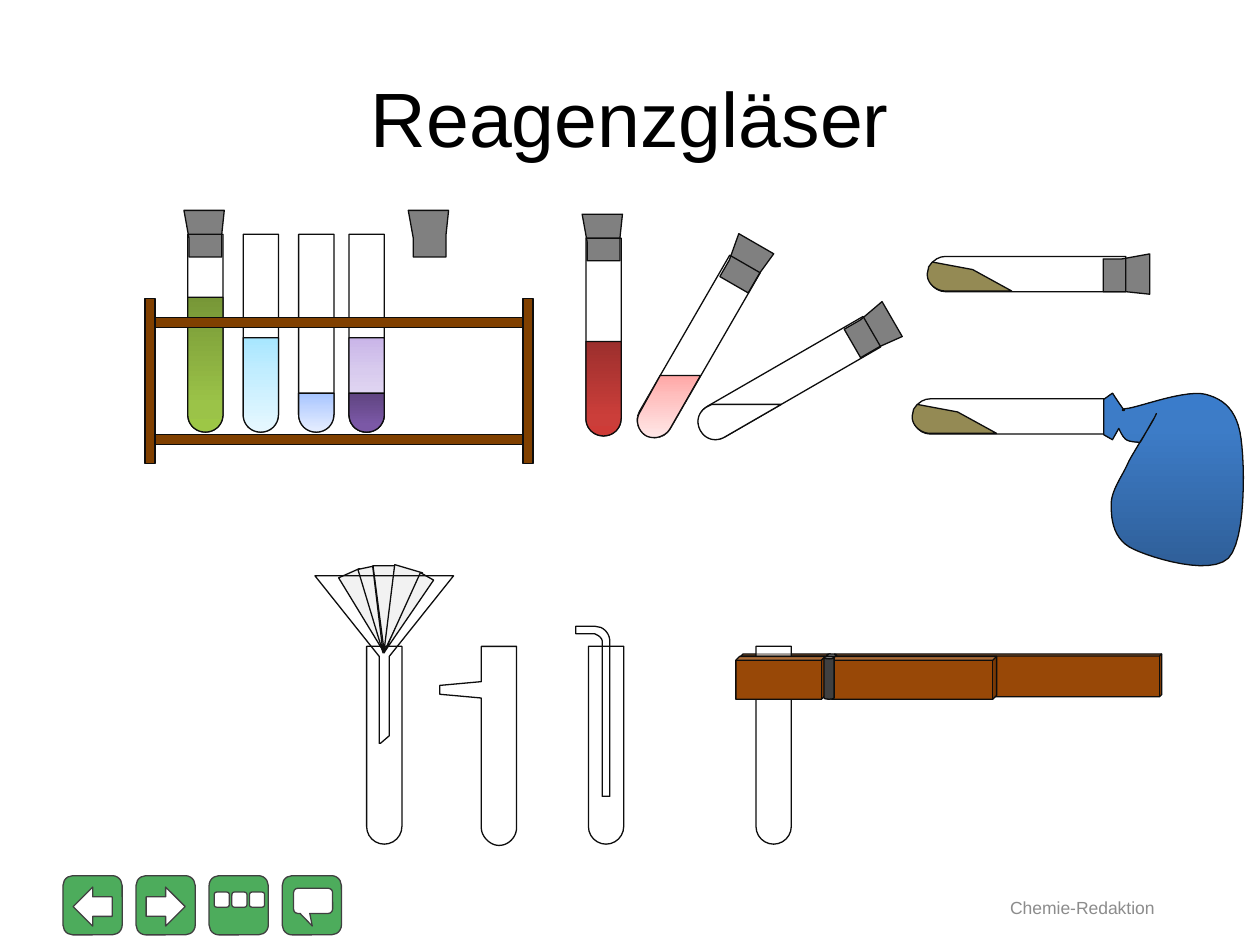
from copy import deepcopy

from pptx import Presentation
from pptx import util as u
from pptx.dml.color import RGBColor
from pptx.enum import shapes, text
from pptx.oxml.ns import qn
from lxml import etree

BLACK = RGBColor(0x00, 0x00, 0x00)
WHITE = RGBColor(0xFF, 0xFF, 0xFF)
INK = RGBColor(0x0D, 0x0D, 0x0D)
DARK = RGBColor(0x40, 0x40, 0x40)
FOOTER = RGBColor(0x8C, 0x8C, 0x8C)
BUTTON = RGBColor(0x4D, 0xAC, 0x5C)
RUBBER = RGBColor(0x80, 0x80, 0x80)
RACK = RGBColor(0x80, 0x40, 0x00)
WOOD = RGBColor(0x98, 0x48, 0x07)
PAPER = RGBColor(0xF2, 0xF2, 0xF2)
SAND = RGBColor(0x94, 0x8A, 0x54)


def gradient(middle, *colors):
    return list(zip((0, middle, 1), map(RGBColor.from_string, colors)))


GREEN = gradient(0.8, "779737", "9BC348", "9DC746")
CYAN = gradient(0.35, "A7E6FF", "C1EDFF", "E7F8FF")
BLUE = gradient(0.35, "A4C4FF", "BFD4FF", "E6EEFF")
LILAC = gradient(0.35, "C9B5E8", "D8CBEE", "F0EAF9")
PURPLE = gradient(0.8, "5F4480", "7B58A6", "7C57A8")
PINK = gradient(0.35, "FFA6A5", "FFC0BF", "FFE7E7")
RED = gradient(0.8, "9C2F2D", "CB3E3A", "CE3B37")
BALLOON = gradient(0.8, "2F5F99", "3D7CC7", "3A7CCB")

MSO = shapes.MSO_SHAPE
TUBE_W, TUBE_H = 0.28, 1.57


def write(tf, words, size=10, color=BLACK, font="Arial", align=text.PP_ALIGN.CENTER):
    tf.word_wrap = True
    tf.vertical_anchor = text.MSO_ANCHOR.MIDDLE
    p = tf.paragraphs[0]
    p.alignment = align
    r = p.add_run()
    r.text = words
    r.font.size = u.Pt(size)
    r.font.name = font
    r.font.color.rgb = color


def flatten(points, steps=12):
    flat = []
    for point in points:
        if len(point) == 2:
            flat.append(point)
            continue
        x0, y0 = flat[-1]
        x1, y1, x2, y2, x3, y3 = point
        for i in range(1, steps + 1):
            t = i / steps
            a, b, c, d = (1 - t) ** 3, 3 * t * (1 - t) ** 2, 3 * t * t * (1 - t), t ** 3
            flat.append((a * x0 + b * x1 + c * x2 + d * x3, a * y0 + b * y1 + c * y2 + d * y3))
    return flat


class Sheet:
    def __init__(self, s, line=INK, width=0.75):
        self.s, self.line, self.width = s, line, width

    def title(self, words, x, y, w, h):
        sp = self.s.shapes.title
        sp.left, sp.top, sp.width, sp.height = map(u.Inches, (x, y, w, h))
        write(sp.text_frame, words, size=44)

    def label(self, words, x, y, w, h, **fmt):
        sp = self.s.shapes.add_textbox(*map(u.Inches, (x, y, w, h)))
        write(sp.text_frame, words, **fmt)

    def style(self, sp, fill, line=None, angle=270):
        sp.shadow.inherit = False
        sp.line.color.rgb = line or self.line
        sp.line.width = u.Pt(self.width)
        if fill is None:
            sp.fill.background()
        elif isinstance(fill, list):
            sp.fill.gradient()
            sp.fill.gradient_angle = angle
            first = sp._element.spPr.find(".//" + qn("a:gs"))
            first.addnext(deepcopy(first))
            for stop, (position, color) in zip(sp.fill.gradient_stops, fill):
                stop.position = position
                stop.color.rgb = color
        else:
            sp.fill.solid()
            sp.fill.fore_color.rgb = fill
        return sp

    def shape(self, kind, x, y, w, h, fill=None, line=None, rot=0, adj=()):
        sp = self.s.shapes.add_shape(kind, *map(u.Inches, (x, y, w, h)))
        sp.rotation = rot
        for i, value in enumerate(adj):
            sp.adjustments[i] = value
        return self.style(sp, fill, line)

    def outline(self, points, fill=None, dx=0, dy=0, rot=0, angle=270):
        pts = [(u.Inches(x + dx), u.Inches(y + dy)) for x, y in flatten(points)]
        fb = self.s.shapes.build_freeform(*pts[0])
        fb.add_line_segments(pts[1:], close=True)
        sp = self.style(fb.convert_to_shape(), fill, angle=angle)
        sp.rotation = rot
        return sp

    def tube(self, x, y, rot=0, fill=None):
        return self.shape(MSO.ROUND_2_SAME_RECTANGLE, x, y, TUBE_W, TUBE_H, fill, rot=rot, adj=(0, 0.5))

    def liquid(self, x, y, level, fill):
        r, end = x + TUBE_W, y + TUBE_H
        mid, bend = x + TUBE_W / 2, end - 0.14
        self.outline([(x, level), (r, level), (r, bend),
                      (r, bend + 0.08, mid + 0.08, end, mid, end),
                      (mid - 0.08, end, x, bend + 0.08, x, bend)], fill)

    def stopper(self, x, y, rot=0):
        self.outline([(0, 0), (0.32, 0), (0.3, 0.19), (0.3, 0.37), (0.04, 0.37), (0.04, 0.22)],
                     RUBBER, x, y, rot)

    def button(self, x):
        self.shape(MSO.ROUNDED_RECTANGLE, x, 6.95, 0.47, 0.47, BUTTON, DARK)


def draw_navigation(sheet):
    for x in (0.5, 1.08, 1.66, 2.24):
        sheet.button(x)
    for x, rot in ((0.58, 180), (1.16, 0)):
        sheet.shape(MSO.RIGHT_ARROW, x, 7.04, 0.31, 0.31, WHITE, DARK, rot)
    for i in range(3):
        sheet.shape(MSO.ROUNDED_RECTANGLE, 1.7 + 0.14 * i, 7.08, 0.12, 0.12, WHITE, DARK)
    sheet.shape(MSO.ROUNDED_RECTANGULAR_CALLOUT, 2.33, 7.05, 0.31, 0.2, WHITE, DARK,
                adj=(-0.02, 1, 0.17))


def draw_rack(sheet):
    sheet.stopper(1.46, 1.67)
    for x, layers in ((1.49, [(2.36, GREEN)]), (1.93, [(2.68, CYAN)]), (2.37, [(3.12, BLUE)]),
                      (2.77, [(2.68, LILAC), (3.12, PURPLE)])):
        sheet.tube(x, 1.86)
        for level, fill in layers:
            sheet.liquid(x, 1.86, level, fill)
    for y in (2.52, 3.45):
        sheet.shape(MSO.RECTANGLE, 1.23, y, 2.92, 0.08, RACK)
    for x in (1.15, 4.15):
        sheet.shape(MSO.RECTANGLE, x, 2.37, 0.08, 1.31, RACK)
    sheet.stopper(3.24, 1.67)


def draw_closed_tubes(sheet):
    sheet.stopper(5.75, 1.91, 30)
    sheet.tube(5.38, 1.99, 30)
    sheet.outline([(5.24, 2.98), (5.56, 2.98), (5.32, 3.4), (5.28, 3.47, 5.19, 3.49, 5.13, 3.46),
                   (5.06, 3.42, 5.04, 3.33, 5.08, 3.27)], PINK)
    sheet.stopper(4.62, 1.7)
    sheet.tube(4.65, 1.89)
    sheet.liquid(4.65, 1.89, 2.71, RED)
    sheet.stopper(6.76, 2.44, 60)
    sheet.tube(6.1, 2.24, 60)
    sheet.outline([(5.65, 3.21), (6.2, 3.21), (5.75, 3.47), (5.68, 3.51, 5.6, 3.49, 5.56, 3.42),
                   (5.52, 3.35, 5.54, 3.27, 5.61, 3.23)], WHITE)


def draw_lying_tubes(sheet):
    sheet.stopper(8.78, 1.99, 90)
    for dx, dy in ((0, 0), (-0.12, 1.13)):
        sheet.tube(8.01 + dx, 1.39 + dy, 90)
        sheet.outline([(7.4, 2.08), (7.72, 2.14), (8.03, 2.31), (7.5, 2.31),
                       (7.43, 2.31, 7.36, 2.25, 7.36, 2.18), (7.36, 2.16, 7.37, 2.14, 7.37, 2.12)],
                      SAND, dx, dy)
    sheet.outline([(8.76, 3.17), (8.76, 3.45), (8.83, 3.49), (8.88, 3.4),
                   (8.89, 3.42, 8.91, 3.47, 8.94, 3.49), (8.97, 3.51, 9.05, 3.51, 9.05, 3.51),
                   (9.07, 3.48, 9.14, 3.35, 9.16, 3.32), (9.18, 3.28, 9.19, 3.26, 9.16, 3.32),
                   (9.13, 3.38, 9.02, 3.55, 8.96, 3.66), (8.91, 3.78, 8.81, 3.9, 8.82, 4.02),
                   (8.82, 4.13, 8.84, 4.29, 9, 4.36), (9.15, 4.43, 9.6, 4.57, 9.75, 4.43),
                   (9.89, 4.28, 9.88, 3.69, 9.85, 3.48), (9.82, 3.26, 9.72, 3.17, 9.57, 3.13),
                   (9.42, 3.09, 9.07, 3.22, 8.96, 3.24), (8.86, 3.25, 8.94, 3.27, 8.92, 3.25),
                   (8.9, 3.23, 8.83, 3.12, 8.83, 3.12)], BALLOON, angle=90)


def draw_funnel_and_pipes(sheet):
    for x, y, w, tilt in ((2.96, 4.49, 0.18, 0), (2.82, 4.52, 0.18, -23.9), (2.91, 4.5, 0.12, -11.8),
                          (3.03, 4.5, 0.23, 16.5), (3.16, 4.53, 0.12, 29.4)):
        sheet.shape(MSO.ISOSCELES_TRIANGLE, x, y, w, 0.69, PAPER, rot=180 + tilt)
    sheet.outline([(2.5, 4.57), (3.6, 4.57), (3.09, 5.21), (3.09, 5.84), (3.02, 5.9), (3.01, 5.9),
                   (3.01, 5.21)])
    sheet.tube(2.91, 5.13)
    sheet.outline([(3.82, 5.13), (4.1, 5.13), (4.1, 6.57), (4.1, 6.64, 4.04, 6.71, 3.96, 6.71),
                   (3.89, 6.71, 3.82, 6.64, 3.82, 6.57), (3.82, 5.54), (3.49, 5.51), (3.49, 5.44),
                   (3.82, 5.41)], WHITE)
    sheet.outline([(4.57, 4.97), (4.72, 4.97), (4.77, 4.98), (4.81, 5, 4.84, 5.04, 4.84, 5.09),
                   (4.84, 6.32), (4.78, 6.32), (4.78, 5.09), (4.78, 5.07, 4.76, 5.05, 4.74, 5.04),
                   (4.72, 5.03), (4.57, 5.03)], WHITE)
    sheet.tube(4.67, 5.13)


def draw_clamp(sheet):
    for x, w in ((5.88, 0.71), (6.61, 2.61)):
        sheet.shape(MSO.CUBE, x, 5.19, w, 0.34, WOOD, adj=(0.05,))
    sheet.shape(MSO.CAN, 6.56, 5.19, 0.08, 0.34, DARK)
    glass = sheet.tube(6, 5.13, fill=WHITE)
    color = glass._element.spPr.find(qn("a:solidFill"))[0]
    etree.SubElement(color, qn("a:alpha")).set("val", "50000")
    for x, w in ((6.6, 1.31), (5.84, 0.71)):
        sheet.shape(MSO.CUBE, x, 5.21, w, 0.34, WOOD, adj=(0.09,))
    sheet.shape(MSO.CAN, 6.54, 5.21, 0.08, 0.34, DARK)


def main():
    prs = Presentation()
    prs.slide_width, prs.slide_height = u.Inches(10), u.Inches(7.5)
    sheet = Sheet(prs.slides.add_slide(prs.slide_layouts[5]))
    draw_navigation(sheet)
    sheet.label("Chemie-Redaktion", 7.89, 7.06, 1.4, 0.28, color=FOOTER)
    sheet.title("Reagenzgläser", 0.5, 0.3, 9, 1.25)
    for draw in (draw_rack, draw_closed_tubes, draw_lying_tubes, draw_funnel_and_pipes, draw_clamp):
        draw(sheet)
    prs.save("out.pptx")


if __name__ == "__main__":
    main()
